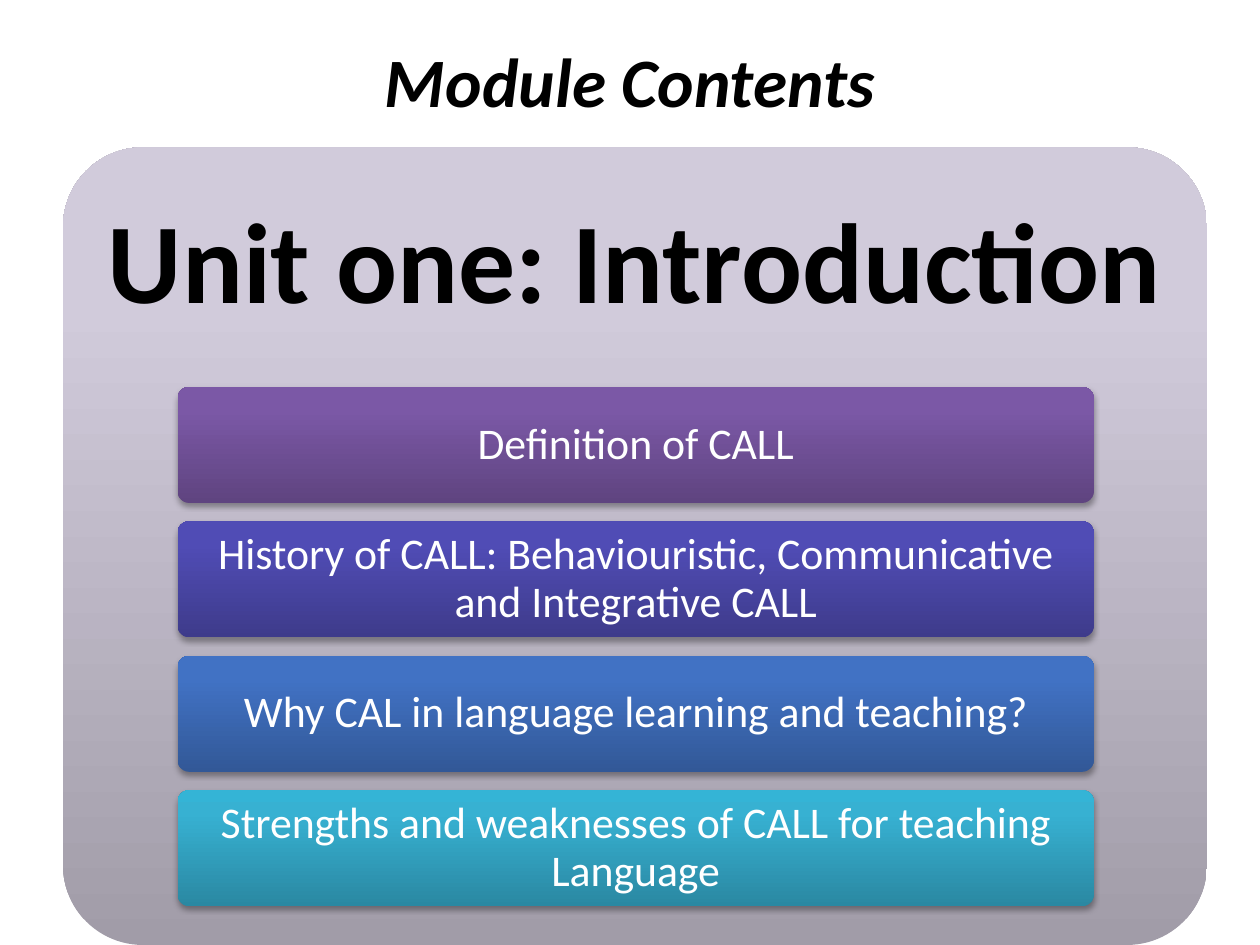
"""Build the module contents slide with its panel of four topic bars."""
import pptx
import pptx.dml.color
import pptx.enum.shapes
import pptx.enum.text
import pptx.oxml
import pptx.oxml.ns
import pptx.util

Cm = pptx.util.Cm
ROUNDED = pptx.enum.shapes.MSO_SHAPE.ROUNDED_RECTANGLE
ANCHOR = pptx.enum.text.MSO_ANCHOR
NAMESPACE = pptx.oxml.ns.nsdecls("a")

COLOURS = {
    "title": "000000",
    "label": "FFFFFF",
    "panel": ("A19CA8", "D1CBDB", "D2CBDC"),
    "purple": ("5F4480", "7B58A6", "7C57A8"),
    "indigo": ("3E3B8B", "504CB5", "4F4BB8"),
    "blue": ("325897", "4172C4", "3F72C7"),
    "teal": ("2A88A2", "37B1D2", "34B4D6"),
}
TOPICS = [
    ("Definition of CALL", "purple"),
    ("History of CALL: Behaviouristic, Communicative and Integrative CALL", "indigo"),
    ("Why CAL in language learning and teaching?", "blue"),
    ("Strengths and weaknesses of CALL for teaching Language", "teal"),
]
FORMATS = {
    "title": {"size": pptx.util.Pt(39.6), "bold": True, "italic": True},
    "heading": {"size": pptx.util.Pt(65), "bold": True},
    "topic": {"size": pptx.util.Pt(25), "bold": False},
}


def add_gradient_box(left, top, width, height, colour):
    """Add a borderless rounded box shaded upwards from dark to light."""
    shape = slide.shapes.add_shape(ROUNDED, Cm(left), Cm(top), Cm(width), Cm(height))
    shape.adjustments[0] = 0.1
    stops = "".join(
        f'<a:gs pos="{position}"><a:srgbClr val="{value}"/></a:gs>'
        for position, value in zip((0, 80000, 100000), COLOURS[colour])
    )
    gradient = pptx.oxml.parse_xml(
        f'<a:gradFill {NAMESPACE} rotWithShape="1"><a:gsLst>{stops}</a:gsLst>'
        '<a:lin ang="16200000" scaled="0"/></a:gradFill>'
    )
    shape.element.spPr.insert(2, gradient)
    shape.line.fill.background()
    shape.shadow.inherit = False
    return shape


def write_text(shape, text, style, colour, anchor, margins, spacing):
    """Write one centred paragraph with the given style."""
    frame = shape.text_frame
    frame.text = text
    horizontal, vertical = margins
    frame_format = {
        "word_wrap": True,
        "auto_size": pptx.enum.text.MSO_AUTO_SIZE.NONE,
        "vertical_anchor": anchor,
        "margin_left": Cm(horizontal),
        "margin_right": Cm(horizontal),
        "margin_top": Cm(vertical),
        "margin_bottom": Cm(vertical),
    }
    for name, value in frame_format.items():
        setattr(frame, name, value)
    paragraph = frame.paragraphs[0]
    paragraph.alignment = pptx.enum.text.PP_ALIGN.CENTER
    paragraph.line_spacing = spacing
    for name, value in {"name": "Calibri", **FORMATS[style]}.items():
        setattr(paragraph.font, name, value)
    paragraph.font.color.rgb = pptx.dml.color.RGBColor.from_string(COLOURS[colour])


presentation = pptx.Presentation()
presentation.slide_width = Cm(25.4)
presentation.slide_height = Cm(19.05)
slide = presentation.slides.add_slide(presentation.slide_layouts[5])

title = slide.shapes.title
title_place = {"left": Cm(1.27), "top": Cm(0.76), "width": Cm(22.86), "height": Cm(3.18)}
for name, value in title_place.items():
    setattr(title, name, value)
write_text(title, "Module Contents", "title", "title", ANCHOR.TOP, (0.25, 0), 1.0)

panel_left, panel_top, panel_width, panel_height = 1.27, 2.97, 23.06, 16.08
add_gradient_box(panel_left, panel_top, panel_width, panel_height, "panel")
heading = slide.shapes.add_textbox(Cm(panel_left), Cm(panel_top), Cm(panel_width), Cm(4.83))
write_text(heading, "Unit one: Introduction", "heading", "title", ANCHOR.MIDDLE, (0.69, 0.69), 0.9)

bar_left, first_bar_top, bar_width, bar_height, bar_gap = 3.58, 7.8, 18.47, 2.34, 0.37
for index, (topic, colour) in enumerate(TOPICS):
    bar_top = first_bar_top + index * (bar_height + bar_gap)
    bar = add_gradient_box(bar_left, bar_top, bar_width, bar_height, colour)
    effects = bar.element.spPr.find(pptx.oxml.ns.qn("a:effectLst"))
    effects.append(pptx.oxml.parse_xml(
        f'<a:outerShdw {NAMESPACE} blurRad="40000" dist="23000" dir="5400000" rotWithShape="0">'
        '<a:srgbClr val="000000"><a:alpha val="35000"/></a:srgbClr></a:outerShdw>'
    ))
    write_text(bar, topic, "topic", "label", ANCHOR.MIDDLE, (0.18, 0.13), 0.9)

presentation.save("out.pptx")
